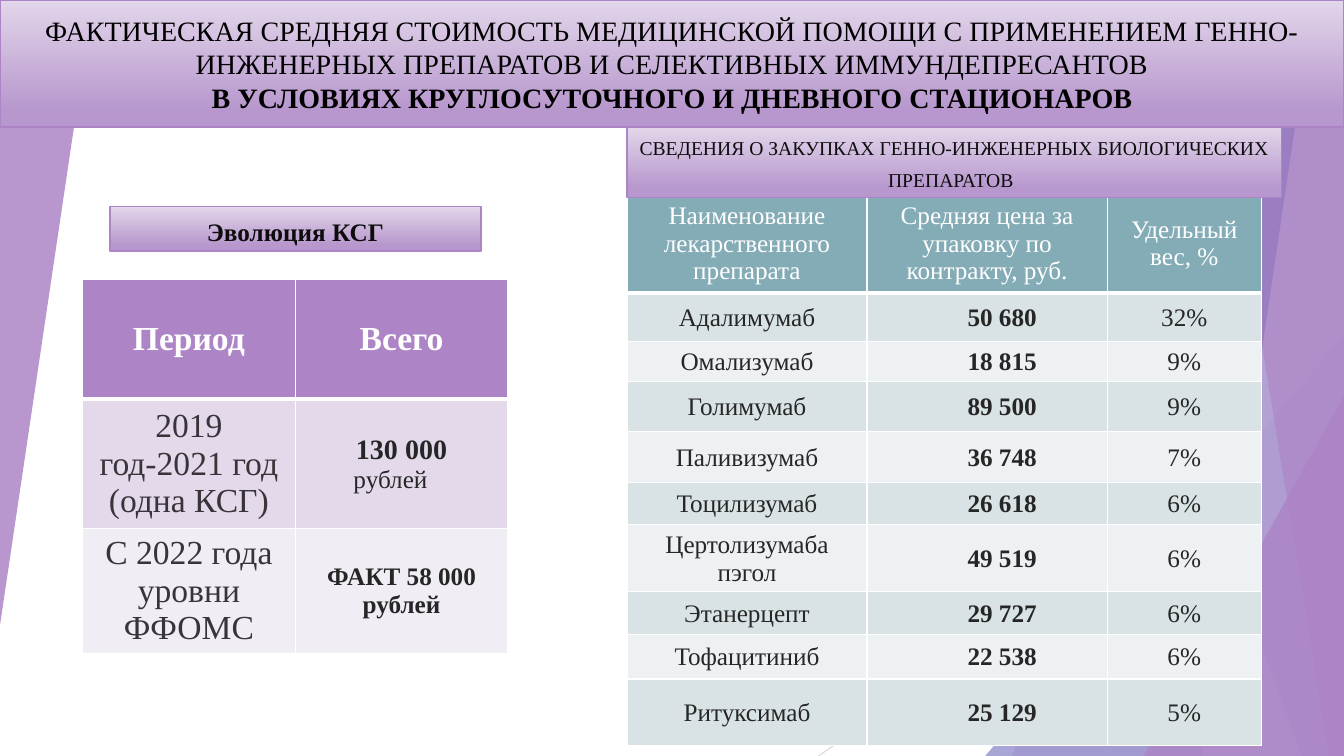
from lxml.etree import SubElement
from pptx import Presentation
from pptx.dml.color import RGBColor as Rgb
from pptx.enum.shapes import MSO_CONNECTOR as Link, MSO_SHAPE as Form
from pptx.enum.text import MSO_ANCHOR as Anchor, PP_ALIGN as Align
from pptx.oxml.ns import qn
from pptx.util import Cm, Pt

WIDE, HIGH = 33.87, 19.05
HUES = {
    "violet": "AD84C6", "blue": "8784C7", "indigo": "524EAB", "lilac": "CEB5DD",
    "light": "E2D6EA", "deep": "B797CD", "teal": "84ACB6", "white": "FFFFFF",
    "black": "000000", "ink": "0D0D0D", "dark": "262626", "plum": "393439",
    "odd": "D9E3E5", "even": "EDF1F3", "rose": "E3D9EA", "pale": "F1EDF5",
    "grey": "BFBFBF", "mist": "D9D9D9",
}
TIGHT = {"margin_left": Cm(0.03), "margin_right": Cm(0.03),
         "margin_top": Cm(0.03), "margin_bottom": 0}
SHIFT = {**TIGHT, "margin_left": Cm(0.79)}


def hue(name):
    return Rgb.from_string(HUES[name])


def apply(item, form):
    for key, value in form.items():
        setattr(item, key, value)


def write(frame, lines):
    frame.word_wrap = True
    for i, runs in enumerate(lines):
        para = frame.paragraphs[0] if i == 0 else frame.add_paragraph()
        para.alignment = Align.CENTER
        for text, size, bold, tone in runs:
            run = para.add_run()
            run.text = text
            apply(run.font, {"name": "Times New Roman", "size": Pt(size), "bold": bold})
            run.font.color.rgb = hue(tone)


def tint(shape, tone, alpha):
    shape.shadow.inherit = False
    shape.line.fill.background()
    shape.fill.solid()
    shape.fill.fore_color.rgb = hue(tone)
    mark = next(shape._element.spPr.iter(qn("a:srgbClr")))
    SubElement(mark, qn("a:alpha")).set("val", str(alpha * 1000))


def draw_line(slide, ends, tone):
    line = slide.shapes.add_connector(Link.STRAIGHT, *map(Cm, ends))
    line.line.color.rgb = hue(tone)
    line.line.width = Pt(0.75)
    SubElement(line._element.spPr, qn("a:effectLst"))


def draw_band(slide, box, top, foot):
    x, y, w, h = box
    right, base = x + w, y + h
    pen = slide.shapes.build_freeform(Cm(right - top), Cm(y))
    pen.add_line_segments([(Cm(right), Cm(y)), (Cm(right), Cm(base)),
                           (Cm(right - foot), Cm(base))], close=True)
    return pen.convert_to_shape()


def draw_peak(slide, x, y, w, h):
    peak = slide.shapes.add_shape(Form.ISOSCELES_TRIANGLE, *map(Cm, (x, y, w, h)))
    peak.adjustments[0] = 1
    return peak


def draw_decor(slide, box):
    x, y, w, h = box
    draw_line(slide, (x + 26.04, y, x + 29.41, y + h), "grey")
    draw_line(slide, (x + w, y + 10.24, x + 20.62, y + h), "mist")
    for kind, a, b, tone, alpha in (
        ("band", 2.67, 8.36, "violet", 30),
        ("band", 7.19, 3.81, "violet", 20),
        ("peak", 9.04, 10.59, "blue", 72),
        ("band", 7.92, 1.07, "indigo", 70),
        ("band", 0.76, 3.58, "lilac", 70),
        ("band", 3.48, 0.38, "violet", 65),
        ("peak", 5.05, 9.07, "violet", 80),
    ):
        if kind == "band":
            part = draw_band(slide, box, a, b)
        else:
            part = draw_peak(slide, x + w - a, y + h - b, a, b)
        tint(part, tone, alpha)
    left = draw_peak(slide, x, y, 2.34, 15.75)
    left.rotation = 180
    tint(left, "violet", 85)


def draw_label(slide, box, lines, anchor=Anchor.BOTTOM):
    label = slide.shapes.add_shape(Form.RECTANGLE, *map(Cm, box))
    label.shadow.inherit = False
    label.line.color.rgb = hue("violet")
    label.line.width = Pt(1)
    label.fill.gradient()
    label.fill.gradient_angle = 270
    for stop, place, tone in zip(label.fill.gradient_stops, (0, 0.88), ("light", "deep")):
        stop.position = place
        stop.color.rgb = hue(tone)
    label.text_frame.vertical_anchor = anchor
    write(label.text_frame, lines)


def edge(cell, head):
    props = cell._tc.get_or_add_tcPr()
    for i, side in enumerate(("lnL", "lnR", "lnT", "lnB")):
        line = SubElement(props, qn("a:" + side))
        line.set("w", str(Pt(3 if head and side == "lnB" else 1)))
        fill = SubElement(line, qn("a:solidFill"))
        SubElement(fill, qn("a:srgbClr")).set("val", HUES["white"])
        props.remove(line)
        props.insert(i, line)


def draw_grid(slide, box, cols, rows, cells):
    grid = slide.shapes.add_table(len(rows), len(cols), *map(Cm, box)).table
    for col, width in zip(grid.columns, cols):
        col.width = Cm(width)
    for r, (height, line) in enumerate(zip(rows, cells)):
        grid.rows[r].height = Cm(height)
        for c, (lines, tone, form) in enumerate(line):
            cell = grid.cell(r, c)
            cell.vertical_anchor = Anchor.MIDDLE
            apply(cell, form)
            cell.fill.solid()
            cell.fill.fore_color.rgb = hue(tone)
            edge(cell, r == 0)
            write(cell.text_frame, lines)
    return grid


def draw_groups(slide, box):
    x, y, w, h = box
    draw_label(slide, (x + 0.69, y, 9.35, 1.12), [[("Эволюция КСГ", 18, True, "ink")]])
    cells = [
        [([[(name, 24, True, "white")]], "violet", {}) for name in ("Период", "Всего")],
        [([[("2019 год-2021 год (одна КСГ)", 24, False, "plum")]], "rose", {}),
         ([[("130 000", 20, True, "dark")], [("рублей", 18, False, "dark")]], "rose", TIGHT)],
        [([[(t, 24, False, "plum")] for t in ("С 2022 года", "уровни ФФОМС")], "pale", {}),
         ([[(t, 18, True, "dark")] for t in ("ФАКТ 58 000", "рублей")], "pale", TIGHT)],
    ]
    rows = (3.02, 3.25, 3.15)
    grid = draw_grid(slide, (x, y + 1.83, w, sum(rows)), (w / 2, w / 2), rows, cells)
    unit = grid.cell(1, 1).text_frame.paragraphs[1]
    unit._p.get_or_add_pPr().set("marR", str(Cm(0.56)))


def draw_drugs(slide, box):
    x, y, w, h = box
    heads = ("Наименование лекарственного препарата",
             "Средняя цена за упаковку по контракту, руб.", "Удельный вес, %")
    drugs = (
        ("Адалимумаб", "50 680", "32%"), ("Омализумаб", "18 815", "9%"),
        ("Голимумаб", "89 500", "9%"), ("Паливизумаб", "36 748", "7%"),
        ("Тоцилизумаб", "26 618", "6%"), ("Цертолизумаба\nпэгол", "49 519", "6%"),
        ("Этанерцепт", "29 727", "6%"), ("Тофацитиниб", "22 538", "6%"),
        ("Ритуксимаб", "25 129", "5%"),
    )
    cells = [[([[(name, 18, False, "white")]], "teal", {}) for name in heads]]
    for i, drug in enumerate(drugs):
        tone = "even" if i % 2 else "odd"
        cells.append([
            ([[(t, 18, c == 1, "dark")] for t in text.split("\n")], tone,
             SHIFT if c == 1 else TIGHT)
            for c, text in enumerate(drug)])
    rows = (2.51, 1.22, 1, 1.27, 1.27, 1.07, 1.68, 1.09, 1.12, 1.68)
    cols = (6.05, 6.05, 3.89)
    draw_grid(slide, (x, y + 1.68, sum(cols), sum(rows)), cols, rows, cells)
    draw_label(slide, (x, y, w, 1.78), [[
        ("СВЕДЕНИЯ О ЗАКУПКАХ ГЕННО-ИНЖЕНЕРНЫХ БИОЛОГИЧЕСКИХ ПРЕПАРАТОВ", 14, False, "ink"),
        (" ", 20, False, "violet")]])


def main():
    deck = Presentation()
    deck.slide_width, deck.slide_height = Cm(WIDE), Cm(HIGH)
    slide = deck.slides.add_slide(deck.slide_layouts[6])
    draw_decor(slide, (0, 0, WIDE, HIGH))
    draw_label(slide, (0, 0, WIDE, 3.2), [
        [("ФАКТИЧЕСКАЯ СРЕДНЯЯ СТОИМОСТЬ МЕДИЦИНСКОЙ ПОМОЩИ С ПРИМЕНЕНИЕМ "
          "ГЕННО-ИНЖЕНЕРНЫХ ПРЕПАРАТОВ И СЕЛЕКТИВНЫХ ИММУНДЕПРЕСАНТОВ", 20, False, "black")],
        [("В УСЛОВИЯХ КРУГЛОСУТОЧНОГО И ДНЕВНОГО СТАЦИОНАРОВ", 20, True, "black")],
    ], Anchor.MIDDLE)
    draw_groups(slide, (2.08, 5.21, 10.72, 11.25))
    draw_drugs(slide, (15.8, 3.2, 16.5, 15.6))
    deck.save("out.pptx")


if __name__ == "__main__":
    main()
